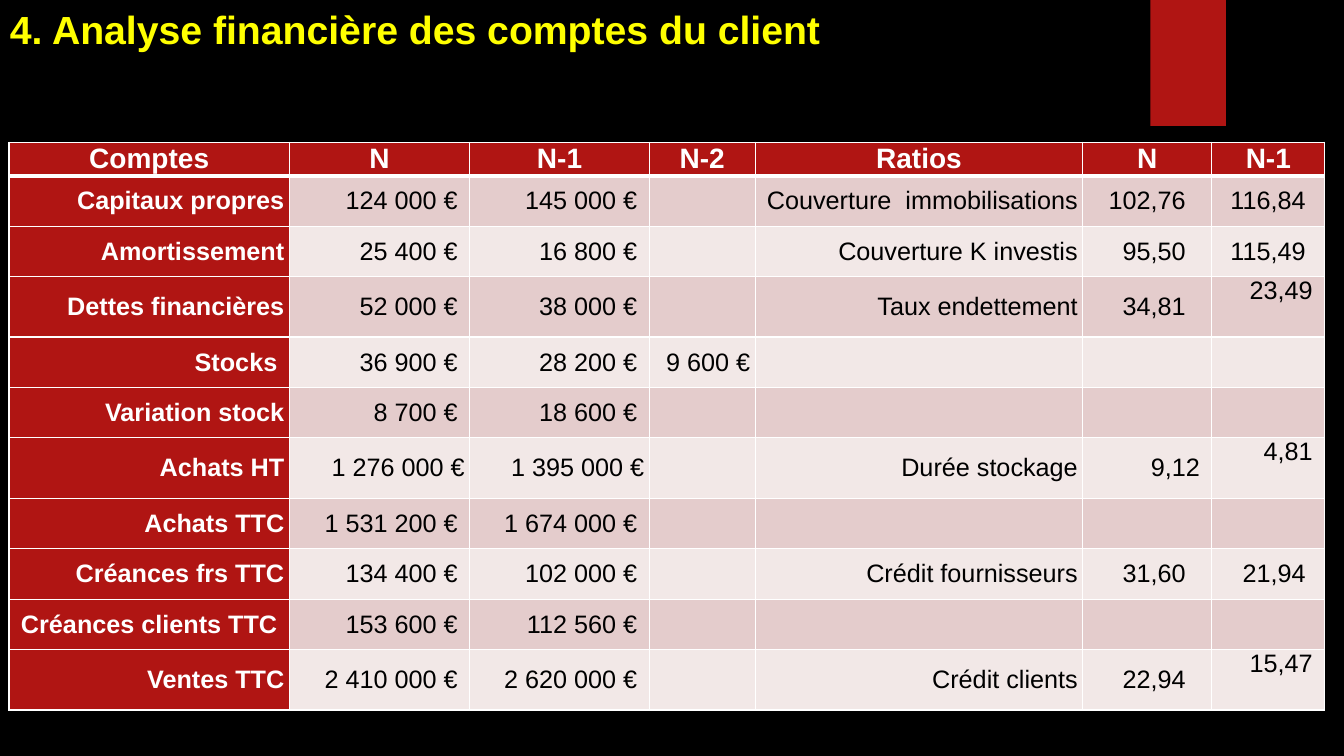
from dataclasses import dataclass

from lxml.etree import SubElement
from pptx import Presentation
from pptx.dml.color import RGBColor
from pptx.enum.shapes import MSO_SHAPE
from pptx.enum.text import MSO_ANCHOR, PP_ALIGN
from pptx.oxml.ns import qn
from pptx.util import Inches, Pt

RED, WHITE, BLACK, YELLOW = "B01513", "FFFFFF", "000000", "FFFF00"
BANDS = ("F2E8E7", "E4CCCC")
HEADS = ("Comptes", "N", "N-1", "N-2", "Ratios", "N", "N-1")
WIDTHS = (2.78, 1.79, 1.78, 1.05, 3.25, 1.28, 1.12)
PADS = (0.05, 0.12, 0.12, 0.05, 0.05, 0.26, 0.19)
SHIFTS = {(4, 0): 0.12, (9, 0): 0.12, (6, 1): 0.05, (6, 2): 0.05, (6, 5): 0.12}


@dataclass
class Line:
    label: str
    now: str
    last: str
    prior: str = ""
    ratio: str = ""
    value: str = ""
    older: str = ""
    tall: bool = False

    def texts(self) -> tuple:
        return (self.label, self.now, self.last, self.prior,
                self.ratio, self.value, self.older)


LINES = (
    Line("Capitaux propres", "124 000 €", "145 000 €", "",
         "Couverture  immobilisations", "102,76", "116,84"),
    Line("Amortissement", "25 400 €", "16 800 €", "",
         "Couverture K investis", "95,50", "115,49"),
    Line("Dettes financières", "52 000 €", "38 000 €", "",
         "Taux endettement", "34,81", "23,49", True),
    Line("Stocks", "36 900 €", "28 200 €", "9 600 €"),
    Line("Variation stock", "8 700 €", "18 600 €"),
    Line("Achats HT", "1 276 000 €", "1 395 000 €", "",
         "Durée stockage", "9,12", "4,81", True),
    Line("Achats TTC", "1 531 200 €", "1 674 000 €"),
    Line("Créances frs TTC", "134 400 €", "102 000 €", "",
         "Crédit fournisseurs", "31,60", "21,94"),
    Line("Créances clients TTC", "153 600 €", "112 560 €"),
    Line("Ventes TTC", "2 410 000 €", "2 620 000 €", "",
         "Crédit clients", "22,94", "15,47", True),
)


def tint(code: str) -> RGBColor:
    return RGBColor.from_string(code)


def style(par, size: float, code: str, bold: bool) -> None:
    for item in (par, *par.runs):
        item.font.size = Pt(size)
        item.font.name = "Arial"
        item.font.bold = bold
        item.font.color.rgb = tint(code)


def edge(cell, top: float, bottom: float) -> None:
    props = cell._tc.get_or_add_tcPr()
    for side, width in (("L", 1), ("R", 1), ("T", top), ("B", bottom)):
        line = SubElement(props, qn(f"a:ln{side}"), w=str(Pt(width)))
        fill = SubElement(line, qn("a:solidFill"))
        SubElement(fill, qn("a:srgbClr"), val=WHITE)


def paint(cell, text: str, row: int, col: int, tall: bool) -> None:
    head = row == 0
    bold = head or col == 0
    lifted = tall and col == 6
    edge(cell, 3 if row == 1 else 1, 3 if head else 1)
    cell.fill.solid()
    cell.fill.fore_color.rgb = tint(RED if bold else BANDS[row % 2])
    pad = 0.05 if head else SHIFTS.get((row, col), PADS[col])
    cell.margin_left = Inches(0.05)
    cell.margin_right = Inches(0.12 if lifted else pad)
    cell.margin_top = cell.margin_bottom = 0
    cell.vertical_anchor = MSO_ANCHOR.TOP if lifted else MSO_ANCHOR.MIDDLE
    cell.text_frame.text = text
    par = cell.text_frame.paragraphs[0]
    par.alignment = PP_ALIGN.CENTER if head else PP_ALIGN.RIGHT
    style(par, 20 if head else 18, WHITE if bold else BLACK, bold)


def add_grid(slide) -> None:
    heights = [0.33] + [0.6 if line.tall else 0.5 for line in LINES]
    frame = slide.shapes.add_table(
        len(heights), len(WIDTHS), Inches(0.09), Inches(1.41),
        Inches(sum(WIDTHS)), Inches(sum(heights)))
    table = frame.table
    for col, width in enumerate(WIDTHS):
        table.columns[col].width = Inches(width)
    for row, height in enumerate(heights):
        table.rows[row].height = Inches(height)
        texts = LINES[row - 1].texts() if row else HEADS
        tall = row > 0 and LINES[row - 1].tall
        for col, text in enumerate(texts):
            paint(table.cell(row, col), text, row, col, tall)


def add_title(slide) -> None:
    box = slide.shapes.add_textbox(0, 0, Inches(12.02), Inches(0.57))
    box.text_frame.word_wrap = True
    box.text_frame.text = "4. Analyse financière des comptes du client"
    style(box.text_frame.paragraphs[0], 28, YELLOW, True)


def add_tab(slide) -> None:
    tab = slide.shapes.add_shape(
        MSO_SHAPE.RECTANGLE, Inches(11.41), 0, Inches(0.75), Inches(1.25))
    tab.shadow.inherit = False
    tab.fill.solid()
    tab.fill.fore_color.rgb = tint(RED)
    tab.line.fill.background()


def main() -> None:
    deck = Presentation()
    deck.slide_width, deck.slide_height = Inches(13.33), Inches(7.5)
    slide = deck.slides.add_slide(deck.slide_layouts[6])
    slide.background.fill.solid()
    slide.background.fill.fore_color.rgb = tint(BLACK)
    add_tab(slide)
    add_title(slide)
    add_grid(slide)
    deck.save("out.pptx")


if __name__ == "__main__":
    main()
